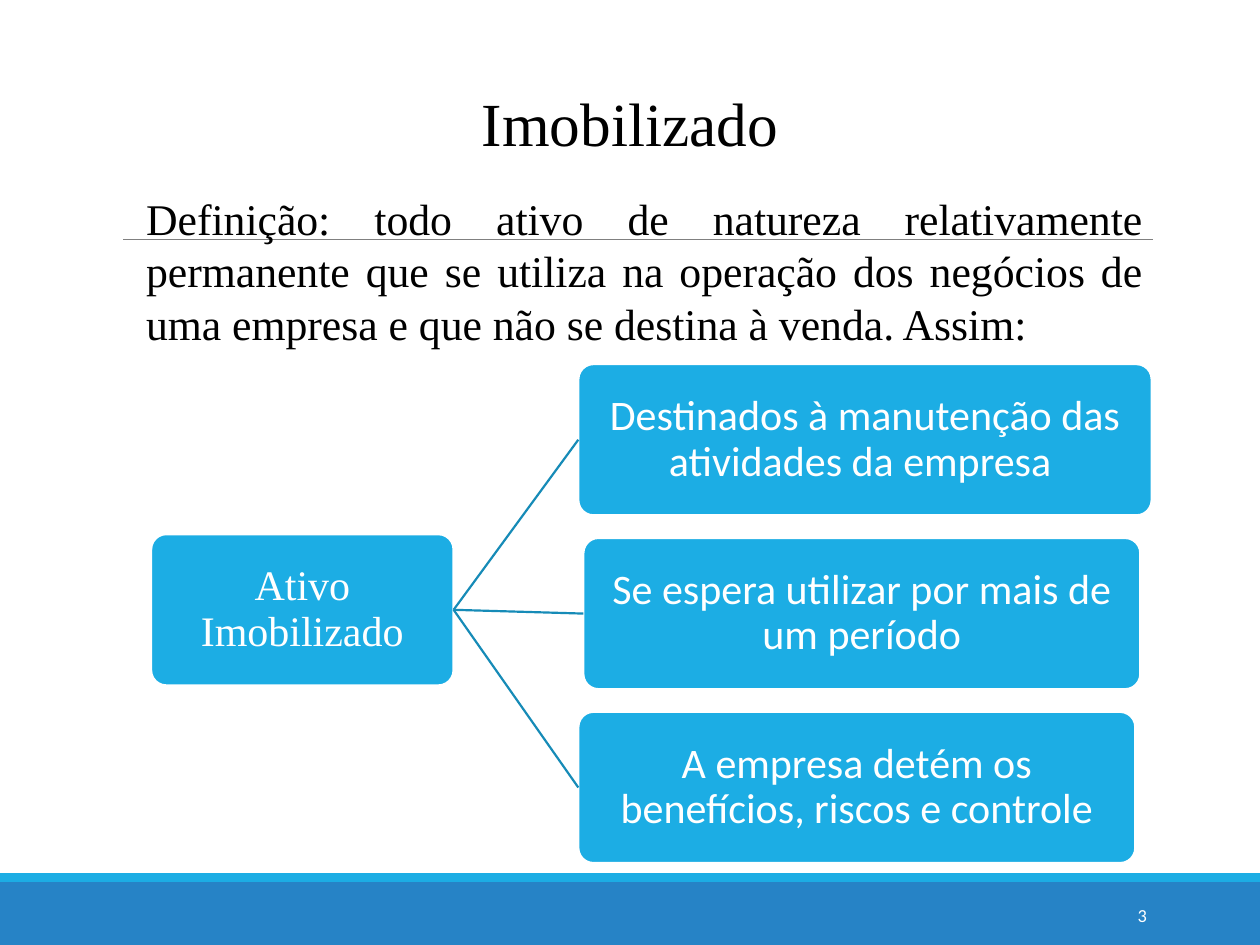
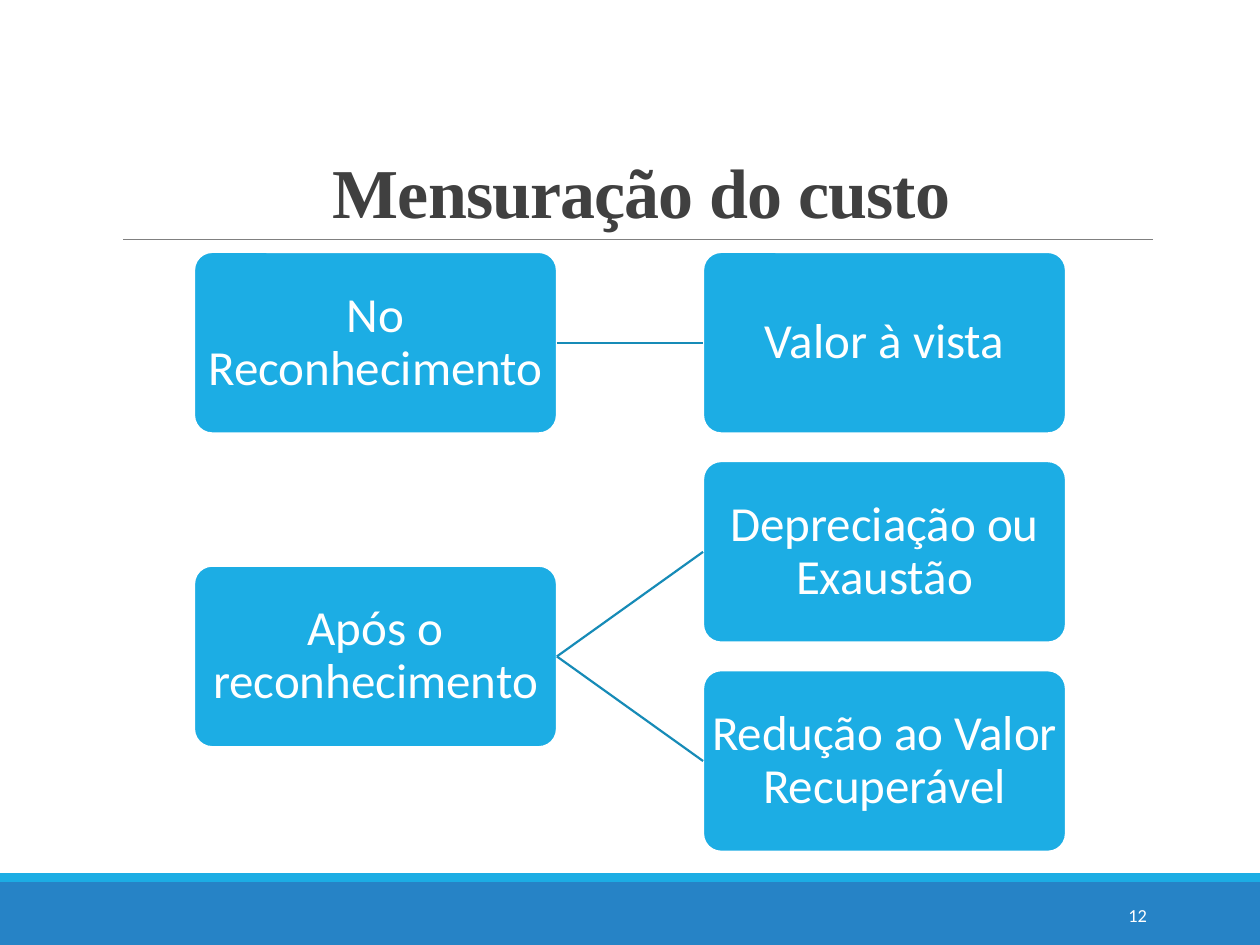
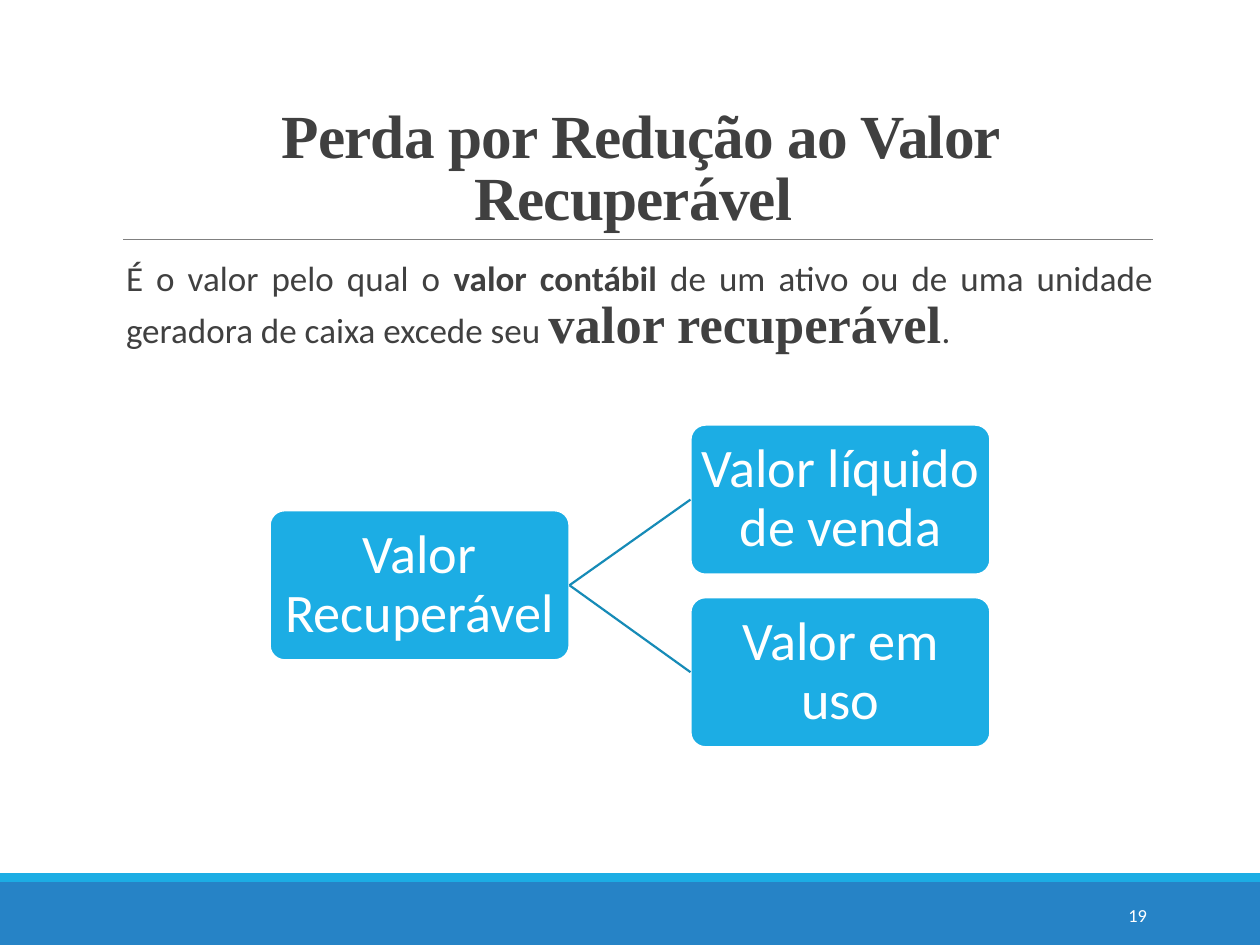
import pptx
import pptx.util
from lxml import etree
from pptx.dml.color import RGBColor
from pptx.enum.shapes import MSO_CONNECTOR, MSO_SHAPE
from pptx.enum.text import MSO_ANCHOR, MSO_AUTO_SIZE, PP_ALIGN
from pptx.oxml.ns import qn
from pptx.util import Inches

SKY = RGBColor(0x1C, 0xAD, 0xE4)
BLUE = RGBColor(0x26, 0x83, 0xC6)
TEAL = RGBColor(0x16, 0x8B, 0xB7)
GRAY = RGBColor(0x80, 0x80, 0x80)
DARK = RGBColor(0x40, 0x40, 0x40)
BLACK = RGBColor(0, 0, 0)
WHITE = RGBColor(0xFF, 0xFF, 0xFF)
SANS = "Calibri"
SERIF = "Times New Roman"

TITLE_AND_BODY = 1
TITLE_ONLY = 5
LEFT_SIDE, RIGHT_SIDE = 1, 3
NODE_INSET = Inches(0.02)


class Lesson:
    """Holds the shared style and the current page."""

    def __init__(self):
        self.deck = pptx.Presentation()
        self.deck.slide_width = Inches(10)
        self.deck.slide_height = Inches(7.5)
        self.page = None

    def start_page(self, layout, number):
        self.page = self.deck.slides.add_slide(self.deck.slide_layouts[layout])
        # Shared bands and rule, behind the placeholders
        rule = self.line(GRAY, 0.5, (0.98, 1.9), (9.15, 1.9))
        backdrop = [self.band(7, 0.5, BLUE), self.band(6.93, 0.07, SKY), rule]
        for index, shape in enumerate(backdrop, start=2):
            self.page.shapes._spTree.insert(index, shape._element)
        # Page number
        box = self.page.shapes.add_textbox(*map(Inches, (8.12, 7.06, 1.08, 0.4)))
        box.text_frame.word_wrap = True
        box.text_frame.vertical_anchor = MSO_ANCHOR.MIDDLE
        para = box.text_frame.paragraphs[0]
        para.text = str(number)
        self.format(para, PP_ALIGN.RIGHT, SANS, 10.5, WHITE)

    def band(self, top, height, color):
        band = self.page.shapes.add_shape(
            MSO_SHAPE.RECTANGLE, 0, Inches(top), self.deck.slide_width, Inches(height))
        band.shadow.inherit = False
        band.fill.solid()
        band.fill.fore_color.rgb = color
        band.line.fill.background()
        return band

    def line(self, color, width, start=(0, 0), end=(0, 0)):
        line = self.page.shapes.add_connector(
            MSO_CONNECTOR.STRAIGHT, *map(Inches, start + end))
        line.line.color.rgb = color
        line.line.width = pptx.util.Pt(width)
        etree.SubElement(line._element.spPr, qn("a:effectLst"))
        return line

    def format(self, para, align, font, size, color, bold=False, spacing=1.0):
        para.alignment = align
        para.line_spacing = spacing
        para.space_before = para.space_after = pptx.util.Pt(0)
        para.font.name = font
        para.font.size = pptx.util.Pt(size)
        para.font.color.rgb = color
        para.font.bold = bold

    def place(self, holder, area, anchor):
        holder.left, holder.top, holder.width, holder.height = map(Inches, area)
        frame = holder.text_frame
        frame.word_wrap = True
        frame.auto_size = MSO_AUTO_SIZE.NONE
        frame.vertical_anchor = anchor
        return frame.paragraphs[0]

    def plain_title(self, text, area):
        para = self.place(self.page.shapes.title, area, MSO_ANCHOR.TOP)
        para.text = text
        self.format(para, PP_ALIGN.CENTER, SERIF, 35, BLACK)

    def bold_title(self, text, size):
        para = self.place(self.page.shapes.title, (0.9, 0.31, 8.25, 1.59),
                          MSO_ANCHOR.BOTTOM)
        para.text = text
        self.format(para, PP_ALIGN.CENTER, SERIF, size, DARK, True, 0.85)
        para._p.pPr.find(qn("a:defRPr")).set("spc", "-50")

    def body(self, area, margin=0.0):
        """Place the body without a bullet and return its paragraph."""
        para = self.place(self.page.placeholders[1], area, MSO_ANCHOR.TOP)
        properties = para._p.get_or_add_pPr()
        properties.set("marL", str(Inches(margin)))
        properties.set("indent", "0")
        etree.SubElement(properties, qn("a:buNone"))
        return para

    def node(self, text, area, font, size):
        node = self.page.shapes.add_shape(
            MSO_SHAPE.ROUNDED_RECTANGLE, *map(Inches, area))
        node.adjustments[0] = 0.1
        node.shadow.inherit = False
        node.fill.solid()
        node.fill.fore_color.rgb = SKY
        node.line.color.rgb = WHITE
        node.line.width = pptx.util.Pt(1.25)
        frame = node.text_frame
        frame.word_wrap = True
        frame.vertical_anchor = MSO_ANCHOR.MIDDLE
        frame.margin_left = frame.margin_right = NODE_INSET
        frame.margin_top = frame.margin_bottom = NODE_INSET
        para = frame.paragraphs[0]
        para.text = text
        self.format(para, PP_ALIGN.CENTER, font, size, WHITE, spacing=0.9)
        return node

    def tree(self, root, children, size, font=SANS):
        """Draw a root node joined to its children; each is (text, area)."""
        root_node = self.node(*root, font, size)
        for text, area in children:
            child = self.node(text, area, SANS, size)
            link = self.line(TEAL, 1.25)
            link.begin_connect(root_node, RIGHT_SIDE)
            link.end_connect(child, LEFT_SIDE)


def definition_page(lesson):
    lesson.start_page(TITLE_AND_BODY, 3)
    lesson.plain_title("Imobilizado", (0.67, 0.63, 8.66, 0.69))
    para = lesson.body((1.06, 1.47, 8.11, 1.78))
    para.text = ("Definição: todo ativo de natureza relativamente permanente que se "
                 "utiliza na operação dos negócios de uma empresa e que não se destina "
                 "à venda. Assim:")
    lesson.format(para, PP_ALIGN.JUSTIFY, SERIF, 25, BLACK)
    # Criteria of a fixed asset
    criteria = [("Destinados à manutenção das atividades da empresa ", 4.59, 4.55),
                ("Se espera utilizar por mais de um período", 4.63, 4.42),
                ("A empresa detém os benefícios, riscos e controle", 4.59, 4.42)]
    lesson.tree(("Ativo Imobilizado", (1.2, 4.24, 2.4, 1.2)),
                [(text, (left, 2.89 + 1.38 * row, width, 1.2))
                 for row, (text, left, width) in enumerate(criteria)],
                24, font=SERIF)


def measurement_page(lesson):
    lesson.start_page(TITLE_ONLY, 12)
    lesson.bold_title(" Mensuração do custo", 40)
    width, height, pitch = 2.88, 1.44, 1.66

    def cell(left, row):
        return left, 2 + pitch * row, width, height

    moments, values = 1.54, 5.58
    lesson.tree(("No Reconhecimento", cell(moments, 0)),
                [("Valor à vista", cell(values, 0))], 28)
    lesson.tree(("Após o reconhecimento", cell(moments, 1.5)),
                [("Depreciação ou Exaustão", cell(values, 1)),
                 ("Redução ao Valor Recuperável", cell(values, 2))], 28)


def impairment_page(lesson):
    lesson.start_page(TITLE_AND_BODY, 19)
    lesson.bold_title(" Perda por Redução ao Valor Recuperável", 35)
    # Definition with emphasised terms
    para = lesson.body((0.9, 2.02, 8.25, 4.4), margin=0.1)
    frame = lesson.page.placeholders[1].text_frame
    frame.margin_left = frame.margin_right = 0
    lesson.format(para, PP_ALIGN.JUSTIFY, SANS, 20, DARK, spacing=0.9)
    for text, bold in [("É o valor pelo qual o ", False),
                       ("valor contábil ", True),
                       ("de um ativo ou de uma unidade geradora de caixa excede seu ", False),
                       ("valor recuperável", True),
                       (".", False)]:
        span = para.add_run()
        span.text = text
        span.font.bold = bold
        if text == "valor recuperável":
            span.font.name = SERIF
            span.font.size = pptx.util.Pt(30)
    # Components of the recoverable amount
    components = ["Valor líquido de venda", "Valor em uso"]
    lesson.tree(("Valor Recuperável", (2.14, 4.05, 2.38, 1.19)),
                [(text, (5.48, 3.37 + 1.37 * row, 2.38, 1.19))
                 for row, text in enumerate(components)], 31)


def main():
    lesson = Lesson()
    definition_page(lesson)
    measurement_page(lesson)
    impairment_page(lesson)
    lesson.deck.save("out.pptx")


if __name__ == "__main__":
    main()
